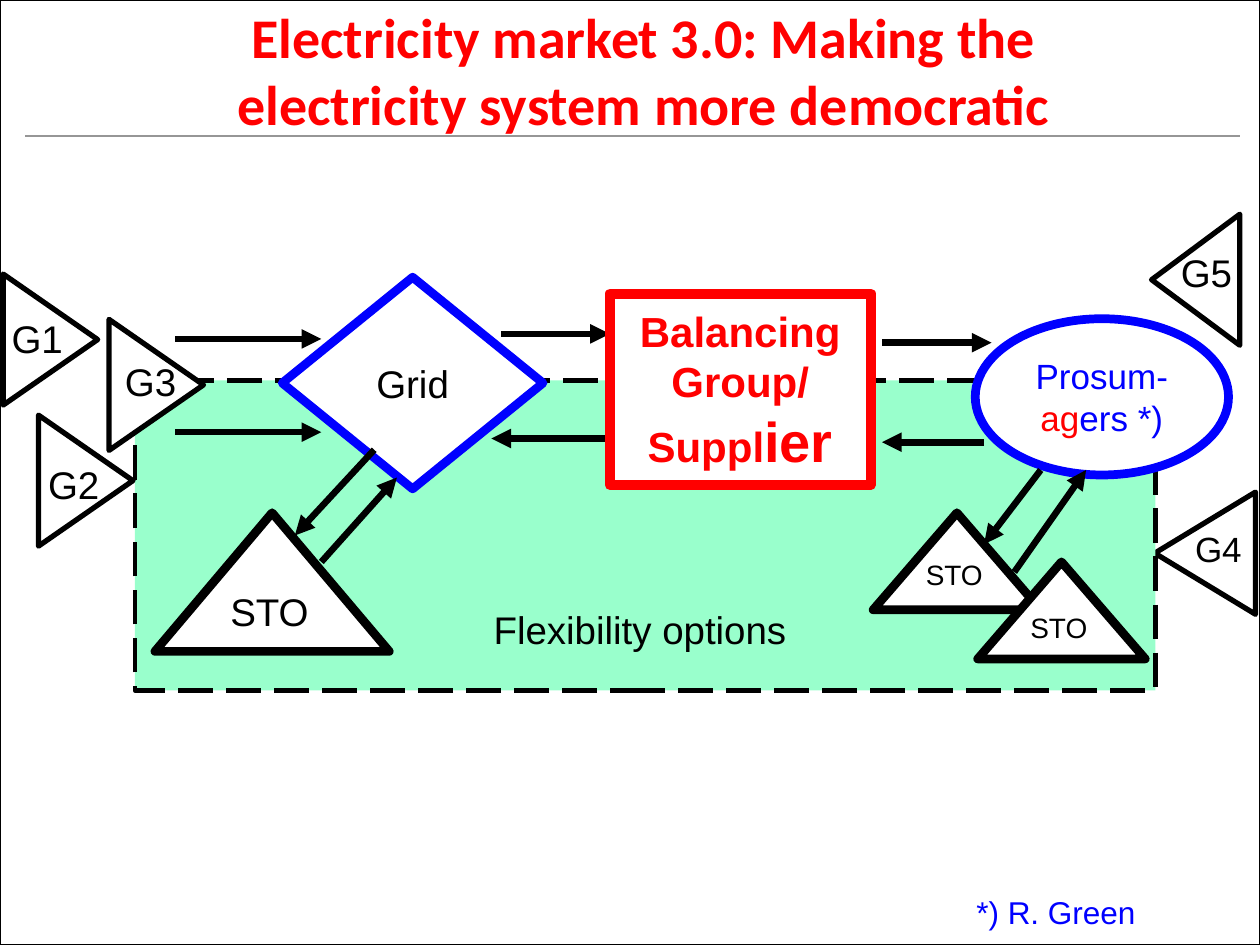
import pptx
import pptx.dml.color
import pptx.enum.dml
import pptx.enum.shapes
import pptx.enum.text
import pptx.oxml
import pptx.oxml.ns
import pptx.util

Inches = pptx.util.Inches
Pt = pptx.util.Pt
Shape = pptx.enum.shapes.MSO_SHAPE
Align = pptx.enum.text.PP_ALIGN
Anchor = pptx.enum.text.MSO_ANCHOR
AutoSize = pptx.enum.text.MSO_AUTO_SIZE

BLACK, WHITE, RED, BLUE = "000000", "FFFFFF", "FF0000", "0000FF"
MINT, GRAY = "99FFCC", "969696"


def color(code):
    return pptx.dml.color.RGBColor.from_string(code)


def drawing(tag, attributes=""):
    return pptx.oxml.parse_xml(f"<a:{tag} {pptx.oxml.ns.nsdecls('a')} {attributes}/>")


class Diagram:
    font = "Arial"

    def __init__(self, page):
        self.page = page

    def set_text(self, shape, spans, size, ink=BLACK, bold=False, align=Align.CENTER,
                 anchor=Anchor.MIDDLE, wrap=True, font=None):
        frame = shape.text_frame
        frame.word_wrap = wrap
        frame.auto_size = AutoSize.NONE
        frame.vertical_anchor = anchor
        para = frame.paragraphs[0]
        para.alignment = align
        para.font.name = font or self.font
        para.font.size = Pt(size)
        para.font.bold = bold
        inks = [changes.get("ink", ink) for text, changes in spans]
        same_ink = len(set(inks)) == 1
        if same_ink:
            para.font.color.rgb = color(ink)
        for (text, changes), span_ink in zip(spans, inks):
            for index, line in enumerate(text.split("\n")):
                if index:
                    para.add_line_break()
                span = para.add_run()
                span.text = line
                if not same_ink:
                    span.font.color.rgb = color(span_ink)
                if "size" in changes:
                    span.font.size = Pt(changes["size"])
        return frame

    def title(self, text, left, top, width, height):
        box = self.page.shapes.title
        self.page.shapes._spTree.append(box._element)
        box.left, box.top = Inches(left), Inches(top)
        box.width, box.height = Inches(width), Inches(height)
        self.set_text(box, [(text, {})], 32, RED, True, font="Calibri")

    def shape(self, kind, left, top, width, height, line=BLACK, weight=5.0,
              fill=WHITE, rotation=0):
        shape = self.page.shapes.add_shape(
            kind, Inches(left), Inches(top), Inches(width), Inches(height))
        shape.shadow.inherit = False
        shape.fill.solid()
        shape.fill.fore_color.rgb = color(fill)
        shape.line.color.rgb = color(line)
        shape.line.width = Pt(weight)
        shape.rotation = rotation
        return shape

    def label(self, text, left, top, width, height, size=22, ink=BLACK,
              align=Align.CENTER):
        box = self.page.shapes.add_textbox(
            Inches(left), Inches(top), Inches(width), Inches(height))
        frame = self.set_text(box, [(text, {})], size, ink, align=align,
                              anchor=Anchor.TOP, wrap=False)
        frame.auto_size = AutoSize.SHAPE_TO_FIT_TEXT

    def line(self, start, end, ink=BLACK, weight=3.75, arrow=True):
        x1, y1, x2, y2 = (Inches(value) for value in (*start, *end))
        line = self.page.shapes.add_connector(
            pptx.enum.shapes.MSO_CONNECTOR.STRAIGHT, x1, y1, x2, y2)
        line.line.color.rgb = color(ink)
        line.line.width = Pt(weight)
        line._element.spPr.append(drawing("effectLst"))
        if arrow:
            line.line._get_or_add_ln().append(drawing("tailEnd", 'type="triangle"'))

    def arrows(self, *ends):
        for start, end in ends:
            self.line(start, end)

    def left_generator(self, name, left, top, label_left, label_top):
        generator = self.shape(Shape.ISOSCELES_TRIANGLE, left, top, 1.04, 0.75,
                               weight=3, rotation=90)
        generator.adjustments[0] = 0.5
        self.label(name, label_left, label_top, 0.61, 0.47)

    def storage(self, left, top, width, height):
        self.shape(Shape.ISOSCELES_TRIANGLE, left, top, width, height)


def main():
    deck = pptx.Presentation()
    deck.slide_width, deck.slide_height = Inches(10), Inches(7.5)
    diagram = Diagram(deck.slides.add_slide(deck.slide_layouts[5]))

    diagram.shape(Shape.RECTANGLE, 0, 0, 10, 7.5, weight=0.75)
    diagram.line((0.2, 1.08), (9.84, 1.08), GRAY, 0.75, arrow=False)
    diagram.title("Electricity market 3.0: Making the\nelectricity system more democratic",
                  0.86, 0.05, 8.5, 1)

    diagram.shape(Shape.ISOSCELES_TRIANGLE, 9.08, 3.99, 0.97, 0.8, weight=3, rotation=270)
    flexibility = diagram.shape(Shape.RECTANGLE, 1.07, 3.02, 8.1, 2.46,
                                weight=2.5, fill=MINT)
    flexibility.line.dash_style = pptx.enum.dml.MSO_LINE.LONG_DASH
    frame = diagram.set_text(flexibility, [("Flexibility options", {})], 22,
                             anchor=Anchor.BOTTOM)
    frame.margin_bottom = Inches(0.3)
    frame.margin_right = Inches(0.18)

    grid = diagram.shape(Shape.DIAMOND, 2.24, 2.2, 2.07, 1.68, BLUE)
    diagram.set_text(grid, [("Grid", {})], 22)
    prosumagers = diagram.shape(Shape.OVAL, 7.74, 2.53, 2.01, 1.24, BLUE)
    diagram.set_text(prosumagers, [("Prosum-", {}), ("ag", {"ink": RED}), ("ers *)", {})],
                     20, BLUE)

    diagram.storage(1.23, 4.07, 1.86, 1.1)
    diagram.label("STO", 1.73, 4.62, 0.83, 0.47, align=Align.LEFT)
    diagram.arrows(
        ((1.39, 2.69), (2.55, 2.69)),
        ((1.39, 3.43), (2.55, 3.43)),
        ((2.97, 3.57), (2.34, 4.25)),
        ((2.55, 4.46), (3.15, 3.79)),
        ((3.98, 2.65), (4.84, 2.65)),
        ((7, 2.72), (7.87, 2.72)),
    )

    supplier = diagram.shape(Shape.RECTANGLE, 4.84, 2.33, 2.07, 1.52, RED, 5.75)
    diagram.set_text(supplier, [("Balancing\nGroup/\nSuppl", {}), ("ier", {"size": 32})],
                     24, RED, True, wrap=False)

    diagram.storage(6.93, 4.07, 1.33, 0.77)
    diagram.arrows(
        ((7.81, 3.51), (7, 3.51)),
        ((4.8, 3.48), (3.9, 3.48)),
        ((8.26, 3.73), (7.81, 4.32)),
        ((8.05, 4.54), (8.62, 3.73)),
    )
    diagram.storage(7.76, 4.46, 1.33, 0.77)
    for left, top in ((7.25, 4.38), (8.08, 4.8)):
        diagram.label("STO", left, top, 0.66, 0.37, 16, align=Align.LEFT)

    diagram.left_generator("G1", -0.12, 2.32, -0.01, 2.45)
    diagram.left_generator("G2", 0.16, 3.44, 0.28, 3.61)
    diagram.left_generator("G3", 0.72, 2.68, 0.89, 2.79)
    diagram.label("G4", 9.38, 4.14, 0.58, 0.44, 20)
    diagram.shape(Shape.ISOSCELES_TRIANGLE, 8.97, 1.87, 1.04, 0.7, weight=3, rotation=270)
    diagram.label("G5", 9.27, 1.93, 0.61, 0.47)
    diagram.label("*) R. Green", 7.65, 7.04, 1.48, 0.4, 18, BLUE, Align.LEFT)

    deck.save("out.pptx")


if __name__ == "__main__":
    main()
